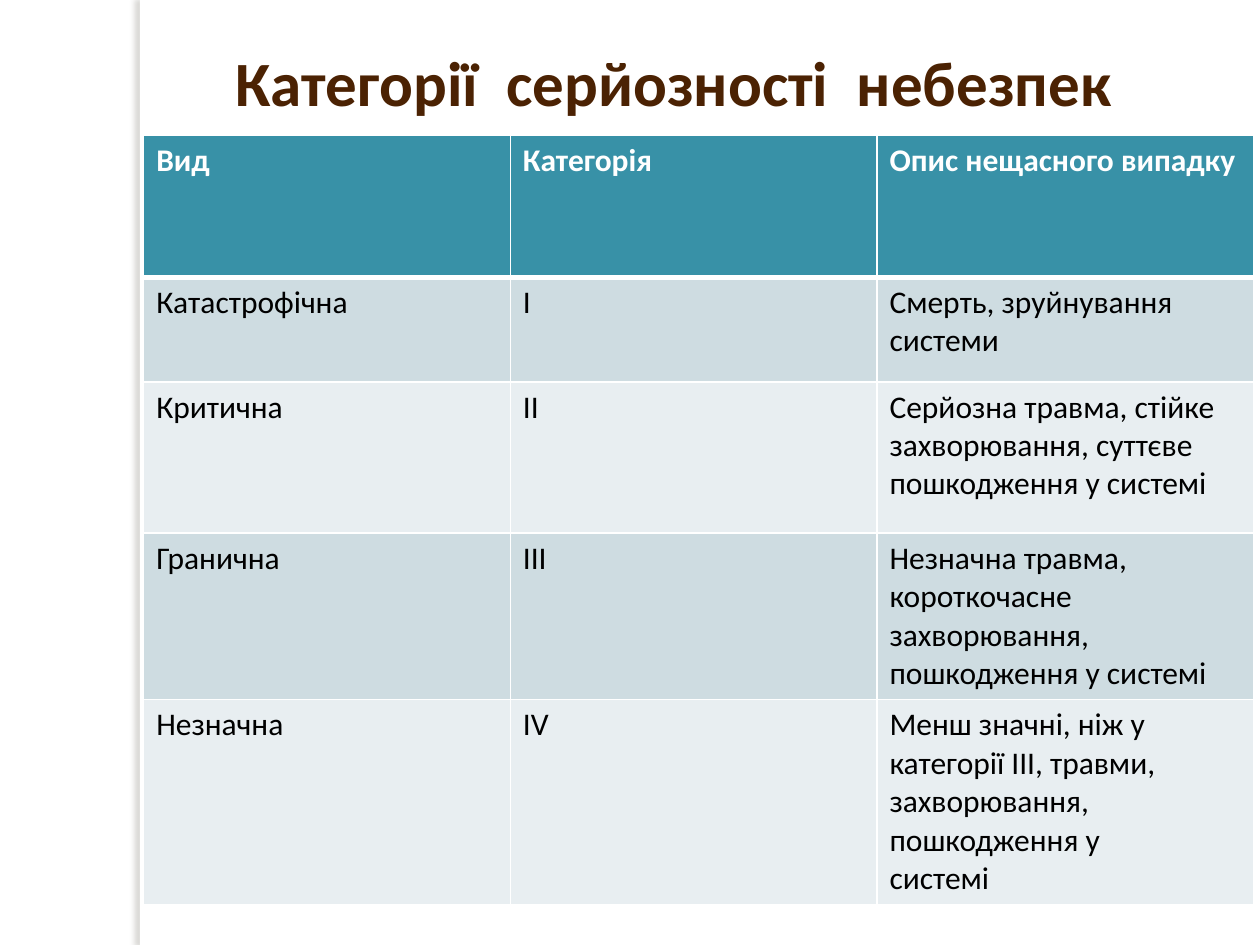
from pptx import Presentation
from pptx.dml.color import RGBColor
from pptx.enum.shapes import MSO_SHAPE
from pptx.enum.text import MSO_ANCHOR, PP_ALIGN
from pptx.oxml import parse_xml
from pptx.oxml.ns import nsdecls
from pptx.util import Inches, Pt

FONT = "Calibri"
COLORS = {
    "white": "FFFFFF", "black": "000000", "title": "4B2203", "shadow": "736F63",
    "header": "3891A7", "band_dark": "CEDCE1", "band_light": "E8EEF1",
}
COL_WIDTHS = [2.91, 2.91, 2.99]
ROW_HEIGHTS = [1.13, 0.83, 1.2, 1.3, 1.61]
ROWS = [
    ["Вид", "Категорія", "Опис нещасного випадку"],
    ["Катастрофічна", "I", "Смерть, зруйнування системи"],
    ["Критична", "II", "Серйозна травма, стійке захворювання, суттєве пошкодження у системі"],
    ["Гранична", "III", "Незначна травма, короткочасне захворювання, пошкодження у системі"],
    ["Незначна", "IV",
     "Менш значні, ніж у категорії III, травми, захворювання, пошкодження у\nсистемі"],
]


def rgb(name):
    return RGBColor.from_string(COLORS[name])


def add_run(p, text, size, color, bold):
    r = p.add_run()
    r.text = text
    r.font.name, r.font.size, r.font.bold = FONT, Pt(size), bold
    r.font.color.rgb = rgb(color)


def add_side_strip(s, box):
    """White strip casting a soft shadow onto the left margin."""
    sp = s.shapes.add_shape(MSO_SHAPE.RECTANGLE, *map(Inches, box))
    sp.fill.solid()
    sp.fill.fore_color.rgb = rgb("white")
    sp.line.fill.background()
    sp.shadow.inherit = False
    sp._element.spPr[-1].append(parse_xml(
        f'<a:outerShdw {nsdecls("a")} blurRad="{Pt(3)}" dist="{Pt(3)}" dir="10800000" '
        f'algn="tl" rotWithShape="0"><a:srgbClr val="{COLORS["shadow"]}">'
        '<a:alpha val="25000"/></a:srgbClr></a:outerShdw>'))


def fill_title(s, box):
    title = s.shapes.title
    title.left, title.top, title.width, title.height = map(Inches, box)
    tf = title.text_frame
    tf.word_wrap = True
    tf.vertical_anchor = MSO_ANCHOR.MIDDLE
    p = tf.paragraphs[0]
    p.alignment = PP_ALIGN.LEFT
    add_run(p, "Категорії  серйозності  небезпек", 36, "title", True)


def set_borders(cell, widths):
    tcPr = cell._tc.get_or_add_tcPr()
    for side, width in widths.items():
        tcPr.append(parse_xml(
            f'<a:ln{side} {nsdecls("a")} w="{Pt(width)}"><a:solidFill>'
            f'<a:srgbClr val="{COLORS["white"]}"/></a:solidFill></a:ln{side}>'))


def add_hazard_table(s, left, top):
    size = Inches(sum(COL_WIDTHS)), Inches(sum(ROW_HEIGHTS))
    table = s.shapes.add_table(len(ROWS), len(COL_WIDTHS),
                               Inches(left), Inches(top), *size).table
    for col, width in zip(table.columns, COL_WIDTHS):
        col.width = Inches(width)
    for i, (row, height) in enumerate(zip(table.rows, ROW_HEIGHTS)):
        row.height = Inches(height)
        header = i == 0
        band = "header" if header else "band_dark" if i % 2 else "band_light"
        for cell, text in zip(row.cells, ROWS[i]):
            set_borders(cell, {"L": 1, "R": 1, "T": 3 if i == 1 else 1,
                               "B": 3 if header else 1})
            cell.fill.solid()
            cell.fill.fore_color.rgb = rgb(band)
            tf = cell.text_frame
            for j, line in enumerate(text.split("\n")):
                p = tf.add_paragraph() if j else tf.paragraphs[0]
                add_run(p, line, 18, "white" if header else "black", header)


def main():
    prs = Presentation()
    prs.slide_width, prs.slide_height = Inches(10), Inches(7.5)
    s = prs.slides.add_slide(prs.slide_layouts[5])
    s.background.fill.solid()
    s.background.fill.fore_color.rgb = rgb("white")
    add_side_strip(s, (1.11, 0, 0.08, 7.5))
    fill_title(s, (1.77, 0.29, 8.43, 0.71))
    add_hazard_table(s, 1.14, 1.07)
    prs.save("out.pptx")


if __name__ == "__main__":
    main()
